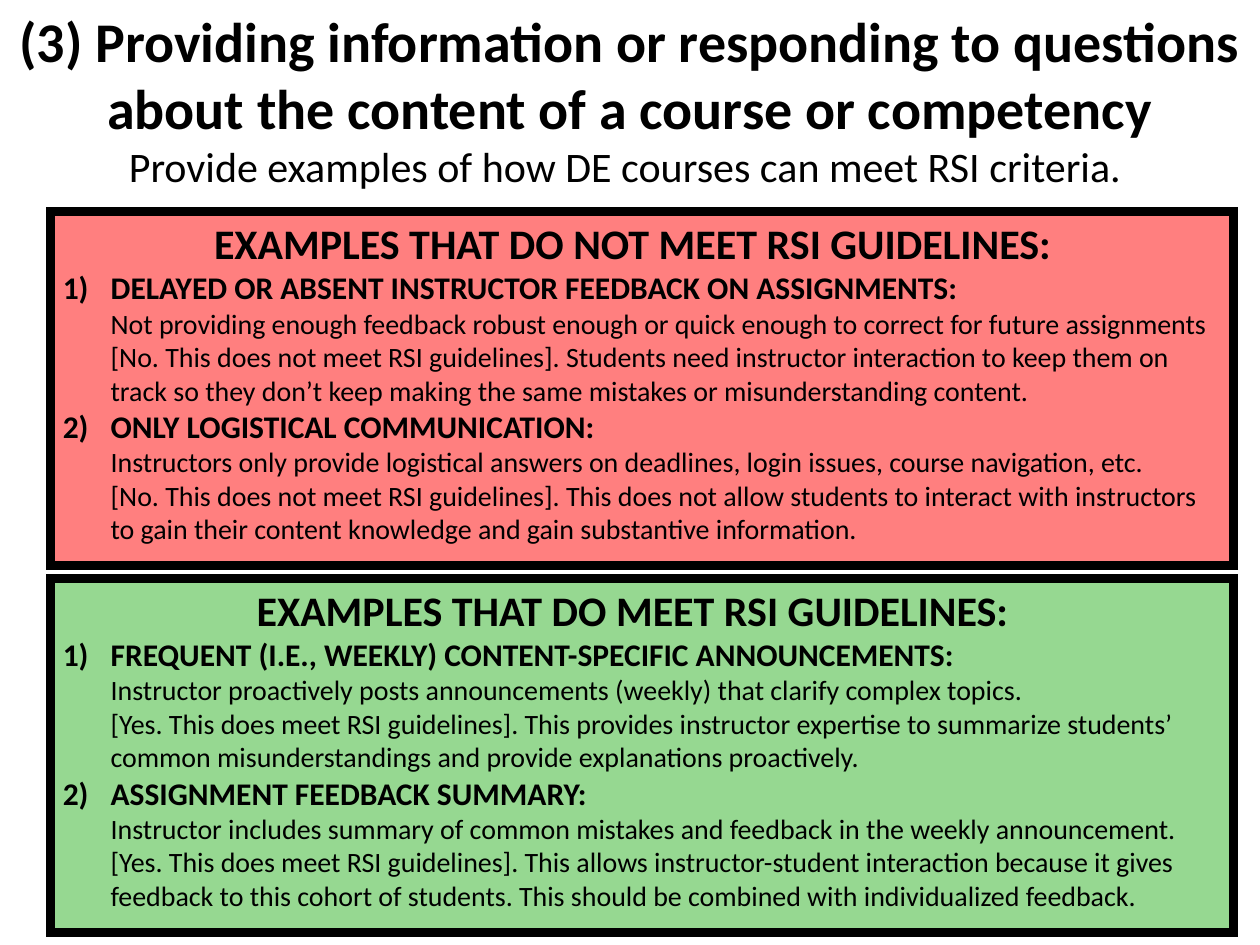
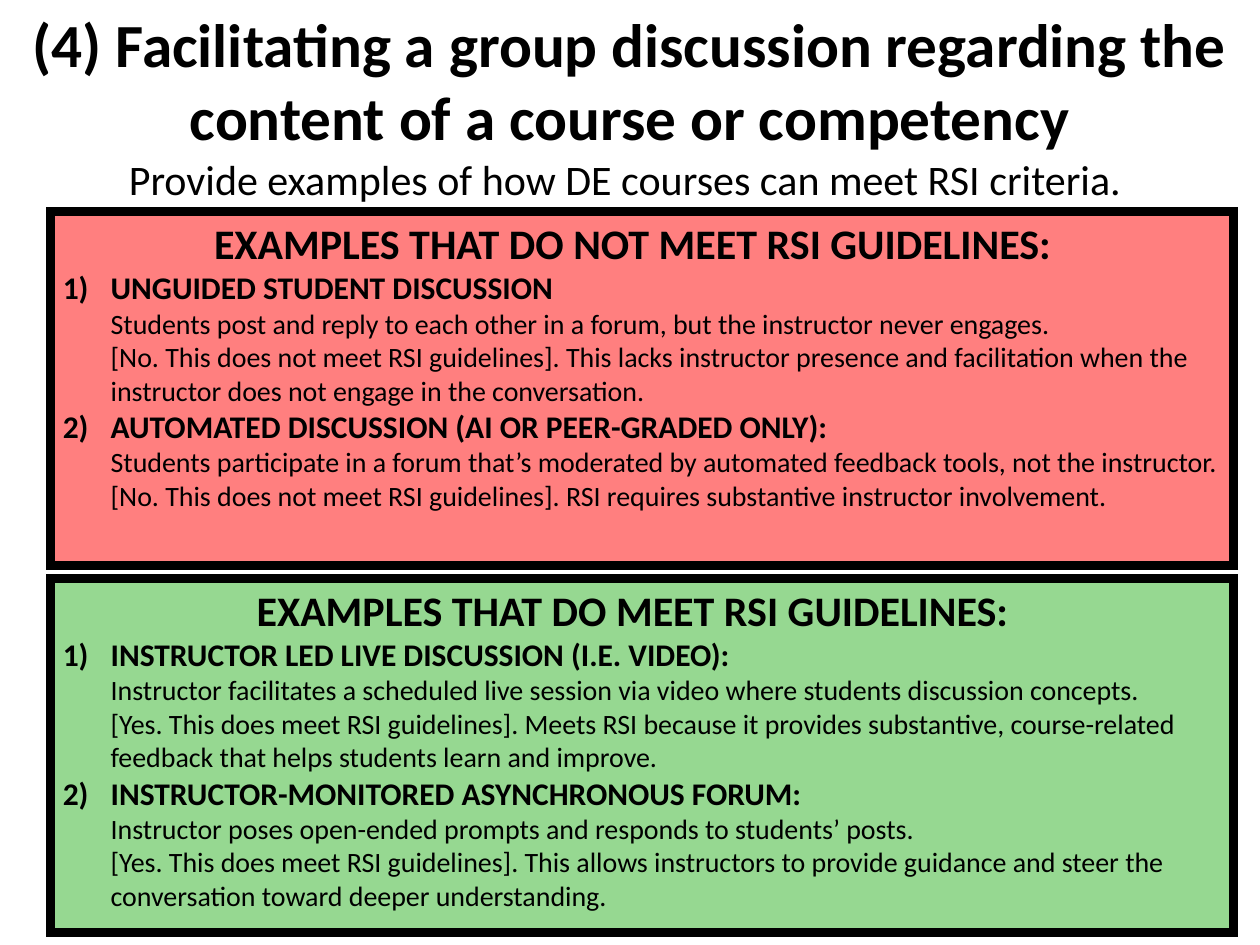
from copy import deepcopy
from dataclasses import dataclass

from lxml.etree import SubElement
from pptx import Presentation
from pptx.dml.color import RGBColor
from pptx.enum.shapes import MSO_SHAPE
from pptx.enum.text import MSO_ANCHOR, MSO_AUTO_SIZE, PP_ALIGN
from pptx.oxml.ns import qn
from pptx.util import Pt

PX = 9144  # EMU in one px, 100 px to the inch


@dataclass(frozen=True)
class Theme:
    font: str = "Calibri"
    ink: RGBColor = RGBColor(0, 0, 0)
    red: RGBColor = RGBColor(0xFF, 0, 0)
    green: RGBColor = RGBColor(0x2E, 0xB3, 0x24)
    panel_opacity: int = 50000
    border: int = 5
    banner: int = 24
    heading: int = 18
    body: int = 16


THEME = Theme()
SUBTITLE = "Provide examples of how DE courses can meet RSI criteria."
PANEL_LEFT, PANEL_TOP, PANEL_WIDTH, PANEL_HEIGHT, PANEL_PITCH = 40, 168, 939, 281, 291
HANGING_INDENT = 38
PANELS = [
    ("EXAMPLES THAT DO NOT MEET RSI GUIDELINES:", THEME.red),
    ("EXAMPLES THAT DO MEET RSI GUIDELINES:", THEME.green),
]

# Title, title size, title box height, then the examples of each panel
SLIDES = [
    (
        "(3) Providing information or responding to questions about the content of a course or competency",
        32, 158,
        [
            [
                ("DELAYED OR ABSENT INSTRUCTOR FEEDBACK ON ASSIGNMENTS:",
                 "Not providing enough feedback robust enough or quick enough to correct for future assignments",
                 "[No. This does not meet RSI guidelines]. Students need instructor interaction to keep them on "
                 "track so they don’t keep making the same mistakes or misunderstanding content."),
                ("ONLY LOGISTICAL COMMUNICATION:",
                 "Instructors only provide logistical answers on deadlines, login issues, course navigation, etc.",
                 "[No. This does not meet RSI guidelines]. This does not allow students to interact with "
                 "instructors to gain their content knowledge and gain substantive information."),
            ],
            [
                ("FREQUENT (I.E., WEEKLY) CONTENT-SPECIFIC ANNOUNCEMENTS:",
                 "Instructor proactively posts announcements (weekly) that clarify complex topics.",
                 "[Yes. This does meet RSI guidelines]. This provides instructor expertise to summarize "
                 "students’ common misunderstandings and provide explanations proactively."),
                ("ASSIGNMENT FEEDBACK SUMMARY:",
                 "Instructor includes summary of common mistakes and feedback in the weekly announcement.",
                 "[Yes. This does meet RSI guidelines]. This allows instructor-student interaction because it "
                 "gives feedback to this cohort of students. This should be combined with individualized "
                 "feedback."),
            ],
        ],
    ),
    (
        "(4) Facilitating a group discussion regarding the content of a course or competency",
        35, 168,
        [
            [
                ("UNGUIDED STUDENT DISCUSSION",
                 "Students post and reply to each other in a forum, but the instructor never engages.",
                 "[No. This does not meet RSI guidelines]. This lacks instructor presence and facilitation "
                 "when the instructor does not engage in the conversation."),
                ("AUTOMATED DISCUSSION (AI OR PEER-GRADED ONLY):",
                 "Students participate in a forum that’s moderated by automated feedback tools, not the "
                 "instructor. [No. This does not meet RSI guidelines]. RSI requires substantive instructor "
                 "involvement."),
            ],
            [
                ("INSTRUCTOR LED LIVE DISCUSSION (I.E. VIDEO):",
                 "Instructor facilitates a scheduled live session via video where students discussion concepts.",
                 "[Yes. This does meet RSI guidelines]. Meets RSI because it provides substantive, "
                 "course-related feedback that helps students learn and improve."),
                ("INSTRUCTOR-MONITORED ASYNCHRONOUS FORUM:",
                 "Instructor poses open-ended prompts and responds to students’ posts.",
                 "[Yes. This does meet RSI guidelines]. This allows instructors to provide guidance and steer "
                 "the conversation toward deeper understanding."),
            ],
        ],
    ),
]


def format_run(run, size, bold):
    run.font.name = THEME.font
    run.font.size = Pt(size)
    run.font.bold = bold
    run.font.color.rgb = THEME.ink


def write_centered(paragraph, text, size, bold, right_margin=0):
    paragraph.text = text
    paragraph.alignment = PP_ALIGN.CENTER
    paragraph._p.get_or_add_pPr().set("marR", str(right_margin * PX))
    format_run(paragraph.runs[0], size, bold)


presentation = Presentation()
presentation.slide_width = 1000 * PX
presentation.slide_height = 750 * PX

for title, title_size, title_height, panel_examples in SLIDES:
    slide = presentation.slides.add_slide(presentation.slide_layouts[6])

    for index, ((banner, color), examples) in enumerate(zip(PANELS, panel_examples)):
        panel = slide.shapes.add_shape(
            MSO_SHAPE.RECTANGLE, PANEL_LEFT * PX, (PANEL_TOP + index * PANEL_PITCH) * PX,
            PANEL_WIDTH * PX, PANEL_HEIGHT * PX)
        panel.shadow.inherit = False
        panel.fill.solid()
        panel.fill.fore_color.rgb = color
        fill_color = panel._element.spPr.find(qn("a:solidFill")).find(qn("a:srgbClr"))
        SubElement(fill_color, qn("a:alpha"), val=str(THEME.panel_opacity))
        panel.line.color.rgb = THEME.ink
        panel.line.width = Pt(THEME.border)
        SubElement(panel._element.spPr.find(qn("a:ln")), qn("a:miter"), lim="800000")
        text_frame = panel.text_frame
        text_frame.word_wrap = True
        text_frame.vertical_anchor = MSO_ANCHOR.TOP
        write_centered(text_frame.paragraphs[0], banner, THEME.banner, True, 15)

        for example in examples:
            paragraph = text_frame.add_paragraph()
            paragraph.text = "\v".join(example)
            paragraph.alignment = PP_ALIGN.LEFT
            properties = paragraph._p.get_or_add_pPr()
            properties.set("marL", str(HANGING_INDENT * PX))
            properties.set("marR", "0")  # otherwise the banner's margin carries over
            properties.set("indent", str(-HANGING_INDENT * PX))
            SubElement(properties, qn("a:buFont"), typeface="+mj-lt")
            SubElement(properties, qn("a:buAutoNum"), type="arabicParenR")
            heading, *details = paragraph.runs
            format_run(heading, THEME.heading, True)
            for detail in details:
                format_run(detail, THEME.body, False)
            # A line break takes the size of the run before it
            for line_break in paragraph._p.findall(qn("a:br")):
                line_break.append(deepcopy(line_break.getprevious().find(qn("a:rPr"))))

    title_box = slide.shapes.add_textbox(0, 0, 1000 * PX, title_height * PX)
    text_frame = title_box.text_frame
    text_frame.word_wrap = True
    text_frame.auto_size = MSO_AUTO_SIZE.SHAPE_TO_FIT_TEXT
    write_centered(text_frame.paragraphs[0], title, title_size, True)
    write_centered(text_frame.add_paragraph(), SUBTITLE, THEME.banner, False, 8)

presentation.save("out.pptx")
